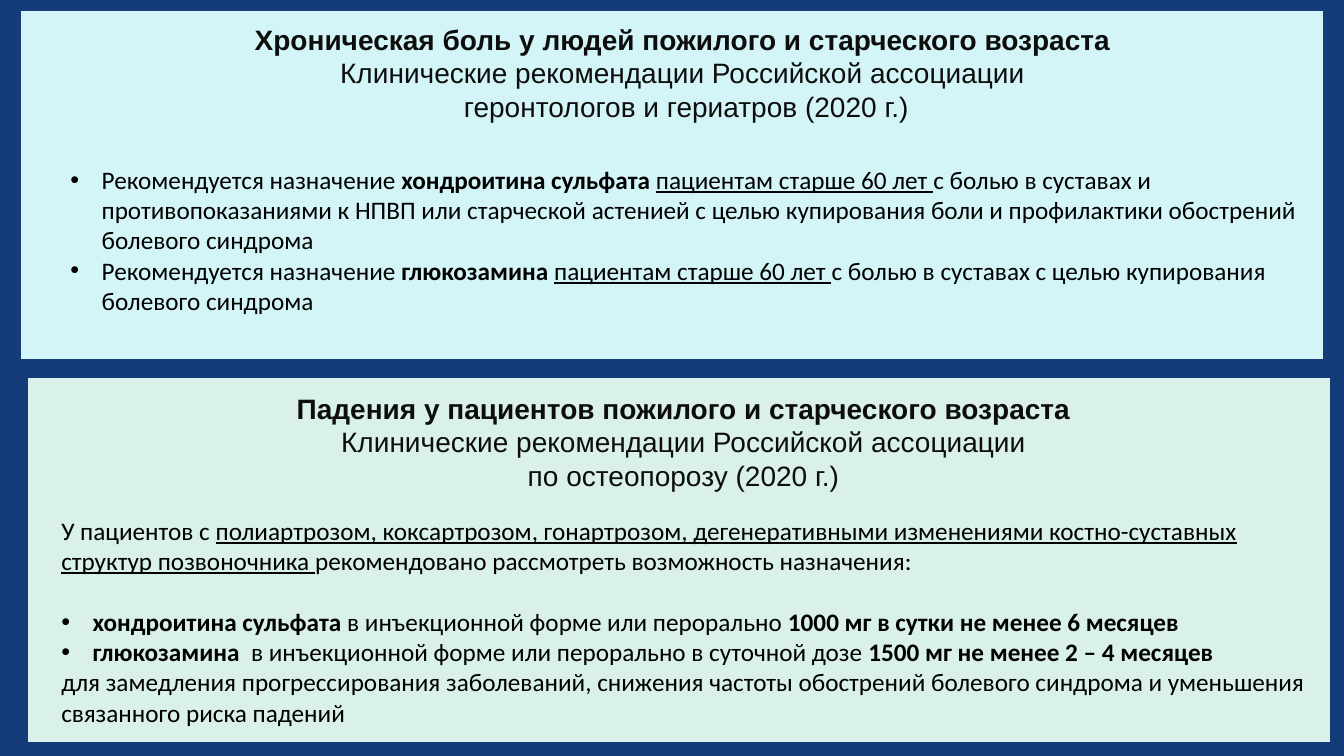
from lxml import etree
from pptx import Presentation
from pptx.dml.color import RGBColor
from pptx.enum.shapes import MSO_SHAPE
from pptx.enum.text import MSO_AUTO_SIZE, PP_ALIGN
from pptx.oxml.ns import qn
from pptx.util import Inches, Pt

RECTANGLE = MSO_SHAPE.RECTANGLE
FIT_SHAPE = MSO_AUTO_SIZE.SHAPE_TO_FIT_TEXT
CENTER, LEFT = PP_ALIGN.CENTER, PP_ALIGN.LEFT

COLORS = {
    "background": "143C78",
    "falls": "D9F1EA",
    "pain": "D4F5F7",
    "heading": "0D0D0D",
    "body": "000000",
}
STYLES = {
    "heading": {"font": "Arial", "size": 20, "align": CENTER},
    "body": {"font": "Calibri", "size": 18, "align": LEFT},
}
BULLET_INDENT = 0.31
LINE_GAP = 22
PLAIN, BOLD, UNDERLINE = "plain", "bold", "underline"

# Panels: color, (left, top, width, height)
PANELS = [
    ("falls", (0.28, 3.75, 12.91, 3.61)),
    ("pain", (0.21, 0.11, 12.91, 3.45)),
]

# Paragraphs: (bulleted, space after in points, [(text, emphasis), ...])
PAIN_HEADING = [
    (False, 0, [("Хроническая боль у людей пожилого и старческого возраста", BOLD)]),
    (False, 0, [("Клинические рекомендации Российской ассоциации", PLAIN)]),
    (False, 0, [(" геронтологов и гериатров (2020 г.)", PLAIN)]),
]
PAIN_BODY = [
    (True, 0, [
        ("Рекомендуется назначение ", PLAIN),
        ("хондроитина сульфата ", BOLD),
        ("пациентам старше 60 лет ", UNDERLINE),
        ("с болью в суставах и противопоказаниями к НПВП или старческой астенией "
         "с целью купирования боли и профилактики обострений болевого синдрома", PLAIN),
    ]),
    (True, 0, [
        ("Рекомендуется назначение ", PLAIN),
        ("глюкозамина ", BOLD),
        ("пациентам старше 60 лет ", UNDERLINE),
        ("с болью в суставах с целью купирования болевого синдрома", PLAIN),
    ]),
]
FALLS_HEADING = [
    (False, 0, [("Падения у пациентов пожилого и старческого возраста", BOLD)]),
    (False, 0, [("Клинические рекомендации Российской ассоциации", PLAIN)]),
    (False, 0, [("по остеопорозу (2020 г.)", PLAIN)]),
]
FALLS_BODY = [
    (False, LINE_GAP, [
        ("У пациентов с ", PLAIN),
        ("полиартрозом, коксартрозом, гонартрозом, дегенеративными изменениями "
         "костно-суставных структур позвоночника ", UNDERLINE),
        ("рекомендовано рассмотреть возможность назначения:", PLAIN),
    ]),
    (True, 0, [
        ("хондроитина сульфата ", BOLD),
        ("в инъекционной форме или перорально ", PLAIN),
        ("1000 мг в сутки не менее 6 месяцев", BOLD),
    ]),
    (True, 0, [
        ("глюкозамина ", BOLD),
        (" в инъекционной форме или перорально в суточной дозе ", PLAIN),
        ("1500 мг не менее 2 – 4 месяцев", BOLD),
    ]),
    (False, 0, [
        ("для замедления прогрессирования заболеваний, снижения частоты обострений "
         "болевого синдрома и уменьшения связанного риска падений", PLAIN),
    ]),
]

# Text boxes: style, wrap, (left, top, width, height), paragraphs
TEXTS = [
    ("heading", False, (2.39, 0.17, 8.76, 1.11), PAIN_HEADING),
    ("body", True, (0.6, 1.58, 12.45, 1.62), PAIN_BODY),
    ("heading", True, (0.51, 3.83, 12.54, 1.11), FALLS_HEADING),
    ("body", True, (0.51, 5.06, 12.54, 2.22), FALLS_BODY),
]


def color(name):
    return RGBColor.from_string(COLORS[name])


def add_panel(slide, fill, box):
    shape = slide.shapes.add_shape(RECTANGLE, *map(Inches, box))
    shape.shadow.inherit = False
    shape.fill.solid()
    shape.fill.fore_color.rgb = color(fill)
    shape.line.fill.background()


def add_bullet(paragraph):
    properties = paragraph._p.get_or_add_pPr()
    properties.set("marL", str(Inches(BULLET_INDENT)))
    properties.set("indent", str(-Inches(BULLET_INDENT)))
    etree.SubElement(properties, qn("a:buFont")).set("typeface", "Arial")
    etree.SubElement(properties, qn("a:buChar")).set("char", "•")


def add_text(slide, style_name, wrap, box, paragraphs):
    style = STYLES[style_name]
    frame = slide.shapes.add_textbox(*map(Inches, box)).text_frame
    frame.word_wrap = wrap
    frame.auto_size = FIT_SHAPE
    for index, (bulleted, space_after, runs) in enumerate(paragraphs):
        paragraph = frame.add_paragraph() if index else frame.paragraphs[0]
        paragraph.alignment = style["align"]
        if space_after:
            paragraph.space_after = Pt(space_after)
        if bulleted:
            add_bullet(paragraph)
        for text, emphasis in runs:
            run = paragraph.add_run()
            run.text = text
            run.font.name = style["font"]
            run.font.size = Pt(style["size"])
            run.font.color.rgb = color(style_name)
            run.font.bold = emphasis == BOLD
            run.font.underline = emphasis == UNDERLINE


def main():
    presentation = Presentation()
    presentation.slide_width = Inches(13.33)
    presentation.slide_height = Inches(7.5)
    slide = presentation.slides.add_slide(presentation.slide_layouts[6])
    slide.background.fill.solid()
    slide.background.fill.fore_color.rgb = color("background")
    for panel in PANELS:
        add_panel(slide, *panel)
    for text in TEXTS:
        add_text(slide, *text)
    presentation.save("out.pptx")


if __name__ == "__main__":
    main()
